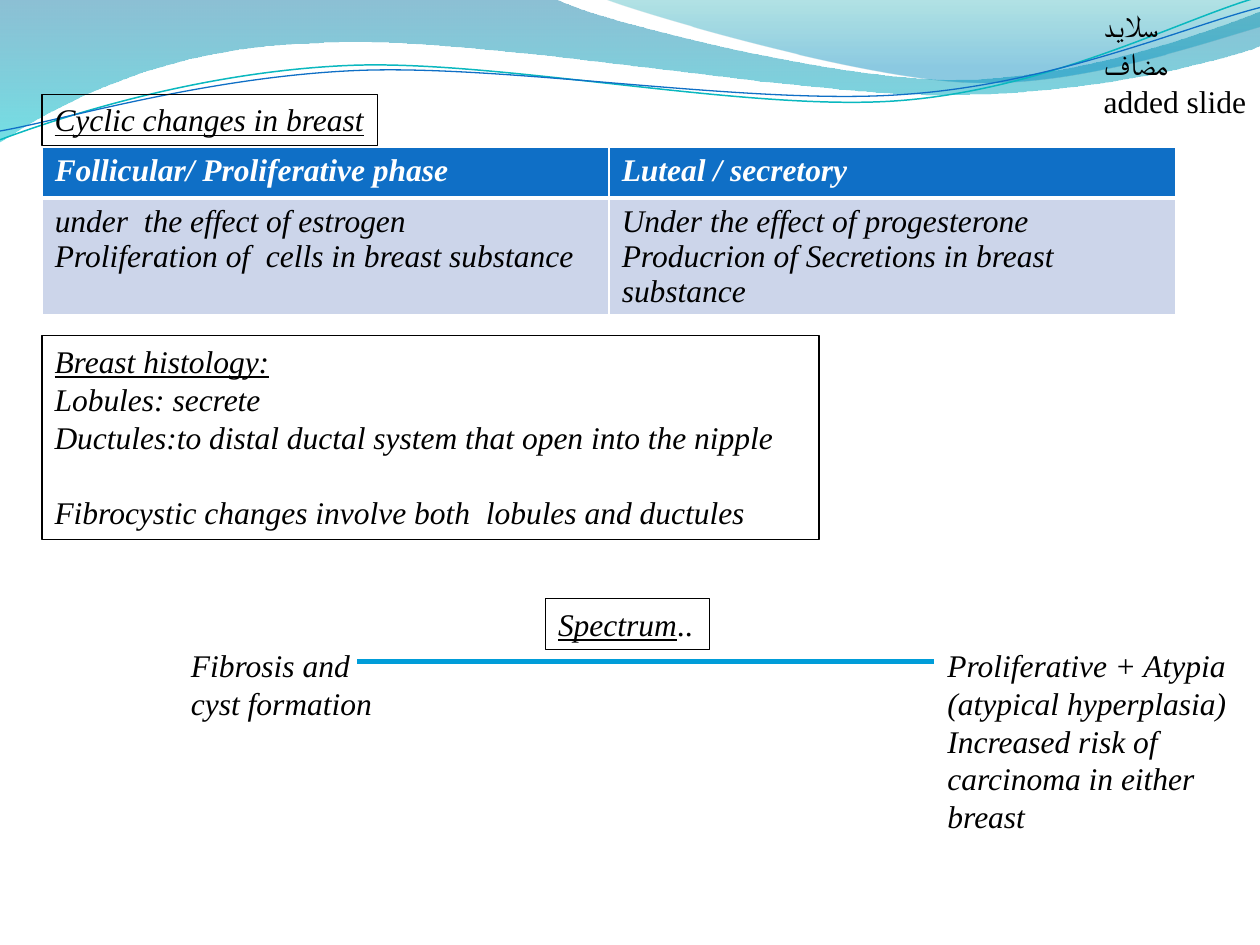
from lxml.etree import SubElement
from pptx import Presentation
from pptx.dml.color import RGBColor
from pptx.enum.shapes import MSO_CONNECTOR as Connector, MSO_SHAPE as Shape
from pptx.enum.text import MSO_ANCHOR as Anchor, PP_ALIGN as Align
from pptx.oxml import parse_xml
from pptx.oxml.ns import nsdecls, qn
from pptx.util import Cm, Pt

FONT, SIZE = "Times New Roman", 18
BLACK, WHITE, BLUE = "000000", "FFFFFF", "0F6FC6"
UNIT = Cm(2.54)  # wave points are in tenths of the slide width

# Waves: start point, then segments of one point (line) or three (curve)
FILLED_WAVES = [
    ([(0, 0), [(4.4, -0.01)],
      [(4.76, 0.17), (6.64, 0.63), (7.58, 0.63)],
      [(8.53, 0.63), (9.58, 0.26), (10, 0.09)],
      [(10.01, 0.36)],
      [(9.83, 0.44), (8.7, 0.76), (7.46, 0.75)],
      [(6.22, 0.75), (3.82, 0.28), (2.57, 0.34)],
      [(1.29, 0.36), (0.46, 0.83), (-0.01, 1.13)]],
     [(0, "0074A1", 45), (100, "00C6CF", 55)]),
    ([(4.79, -0.01),
      [(5.09, 0.11), (6.82, 0.62), (7.69, 0.65)],
      [(8.56, 0.69), (9.61, 0.32), (10, 0.21)],
      [(10, 0)]],
     [(0, "00A1A9", 30), (80, "008BBF", 45)]),
]
LINE_WAVES = [
    ([(0, 1.11),
      [(0.48, 0.93), (1.58, 0.57), (2.77, 0.52)],
      [(3.95, 0.47), (5.93, 0.89), (7.13, 0.8)],
      [(8.33, 0.71), (9.38, 0.15), (9.98, -0.02)]], "0AB8BF", 0.85),
    ([(0, 1.04),
      [(0.47, 0.96), (1.64, 0.61), (2.83, 0.56)],
      [(4.03, 0.51), (5.97, 0.84), (7.17, 0.75)],
      [(8.36, 0.67), (9.41, 0.21), (10, 0.06)]], BLUE, 0.75),
]

PHASES = [
    [["Follicular/ Proliferative phase"], ["Luteal / secretory"]],
    [["under  the effect of estrogen",
      "Proliferation of  cells in breast substance"],
     ["Under the effect of progesterone",
      "Producrion of Secretions in breast substance"]],
]
# Row height in cm, fill, text colour, bold, border shared with the other row
ROW_STYLES = [(1.02, BLUE, WHITE, True, "lnB"), (2.36, "CCD5EA", BLACK, False, "lnT")]

# Texts: position in cm, framed, wrapped, paragraphs of (text, style) runs;
# style letters: i italic, u underlined
TEXTS = [
    ((22, 0, 3.4, 2.5), False, True,
     [[("سلايد", "")], [("مضاف", "")], [("added slide", "")]]),
    ((0.85, 6.77, 15.66, 4.11), True, True,
     [[("Breast histology:", "iu")], [("Lobules: secrete", "i")],
      [("Ductules:to distal ductal system that open into the nipple", "i")],
      [("Fibrocystic changes involve both  lobules and ductules", "i")]]),
    ((3.6, 12.9, 4.65, 1.8), False, True,
     [[("Fibrosis and cyst formation", "i")]]),
    ((18.85, 12.9, 6.55, 4.11), False, True,
     [[("Proliferative + Atypia (atypical hyperplasia)", "i")],
      [("Increased risk of carcinoma in either breast", "i")]]),
    ((11, 12.07, 3.3, 1.02), True, False,
     [[("Spectrum", "iu"), ("..", "")]]),
    ((0.85, 1.9, 6.76, 1.03), True, False,
     [[("Cyclic changes in breast", "iu")]]),
]
GAP_BEFORE = {"Fibrocystic": 21.5}  # points above the closing remark


def color(value):
    return RGBColor.from_string(value)


def add_run(paragraph, text, style="i", text_color=BLACK, bold=False):
    run = paragraph.add_run()
    run.text = text
    font = run.font
    font.name, font.size, font.bold = FONT, Pt(SIZE), bold
    font.italic, font.underline = "i" in style, "u" in style
    font.color.rgb = color(text_color)
    # Typeface for Arabic letters
    SubElement(run.font._element, qn("a:cs")).set("typeface", FONT)


def next_paragraph(frame, index):
    return frame.add_paragraph() if index else frame.paragraphs[0]


def scaled(point):
    return tuple(round(value * UNIT) for value in point)


def add_wave(slide, wave, close):
    """Build the outline from its nodes, then bend the curved segments."""
    start, *segments = wave
    builder = slide.shapes.build_freeform(*scaled(start))
    builder.add_line_segments([scaled(segment[-1]) for segment in segments], close=close)
    shape = builder.convert_to_shape()
    shape.shadow.inherit = False
    shape.fill.background()
    lines = list(shape.element.iter(qn("a:lnTo")))
    for line, segment in zip(lines, segments):
        if len(segment) == 1:
            continue
        points = "".join(f'<a:pt x="{x - shape.left}" y="{y - shape.top}"/>'
                         for x, y in map(scaled, segment))
        curve = parse_xml(f'<a:cubicBezTo {nsdecls("a")}>{points}</a:cubicBezTo>')
        line.getparent().replace(line, curve)
    return shape


def set_gradient(shape, stops):
    stop_xml = "".join(
        f'<a:gs pos="{position * 1000}"><a:srgbClr val="{value}">'
        f'<a:alpha val="{alpha * 1000}"/></a:srgbClr></a:gs>'
        for position, value, alpha in stops)
    gradient = parse_xml(f'<a:gradFill {nsdecls("a")} rotWithShape="1"><a:gsLst>{stop_xml}'
                         '</a:gsLst><a:lin ang="5400000" scaled="0"/></a:gradFill>')
    properties = shape.element.spPr
    properties.replace(properties.find(qn("a:noFill")), gradient)


def add_text(slide, position, framed, wrapped, paragraphs):
    box = [Cm(value) for value in position]
    if framed:
        shape = slide.shapes.add_shape(Shape.RECTANGLE, *box)
        shape.shadow.inherit = False
        shape.fill.background()
        shape.line.color.rgb, shape.line.width = color(BLACK), Pt(0.75)
    else:
        shape = slide.shapes.add_textbox(*box)
    frame = shape.text_frame
    frame.word_wrap = wrapped
    frame.vertical_anchor = Anchor.TOP
    for index, runs in enumerate(paragraphs):
        paragraph = next_paragraph(frame, index)
        paragraph.alignment = Align.LEFT
        first_word = runs[0][0].split()[0]
        if first_word in GAP_BEFORE:
            paragraph.space_before = Pt(GAP_BEFORE[first_word])
        for text, style in runs:
            add_run(paragraph, text, style)


def add_phase_table(slide):
    height = sum(style[0] for style in ROW_STYLES)
    table = slide.shapes.add_table(2, 2, Cm(0.85), Cm(2.97), Cm(22.86), Cm(height)).table
    for row, (row_height, fill, text_color, bold, border) in enumerate(ROW_STYLES):
        table.rows[row].height = Cm(row_height)
        for column, lines in enumerate(PHASES[row]):
            cell = table.cell(row, column)
            cell.fill.solid()
            cell.fill.fore_color.rgb = color(fill)
            # Thick white rule between the rows
            cell._tc.get_or_add_tcPr().insert(0, parse_xml(
                f'<a:{border} {nsdecls("a")} w="{Pt(3)}"><a:solidFill>'
                f'<a:srgbClr val="{WHITE}"/></a:solidFill></a:{border}>'))
            for index, line in enumerate(lines):
                paragraph = next_paragraph(cell.text_frame, index)
                add_run(paragraph, line, "i", text_color, bold)


def main():
    presentation = Presentation()
    presentation.slide_width, presentation.slide_height = Cm(25.4), Cm(19.05)
    slide = presentation.slides.add_slide(presentation.slide_layouts[6])

    # Waves along the top
    for wave, stops in FILLED_WAVES:
        shape = add_wave(slide, wave, close=True)
        shape.line.fill.background()
        set_gradient(shape, stops)
    for wave, value, width in LINE_WAVES:
        line = add_wave(slide, wave, close=False).line
        line.color.rgb, line.width = color(value), Pt(width)

    add_phase_table(slide)

    # Spectrum line
    spectrum = slide.shapes.add_connector(
        Connector.STRAIGHT, Cm(7.2), Cm(13.33), Cm(18.83), Cm(13.33))
    spectrum.line.color.rgb, spectrum.line.width = color("009DD9"), Pt(3)
    SubElement(spectrum.element.spPr, qn("a:effectLst"))

    for text in TEXTS:
        add_text(slide, *text)
    presentation.save("out.pptx")


if __name__ == "__main__":
    main()
